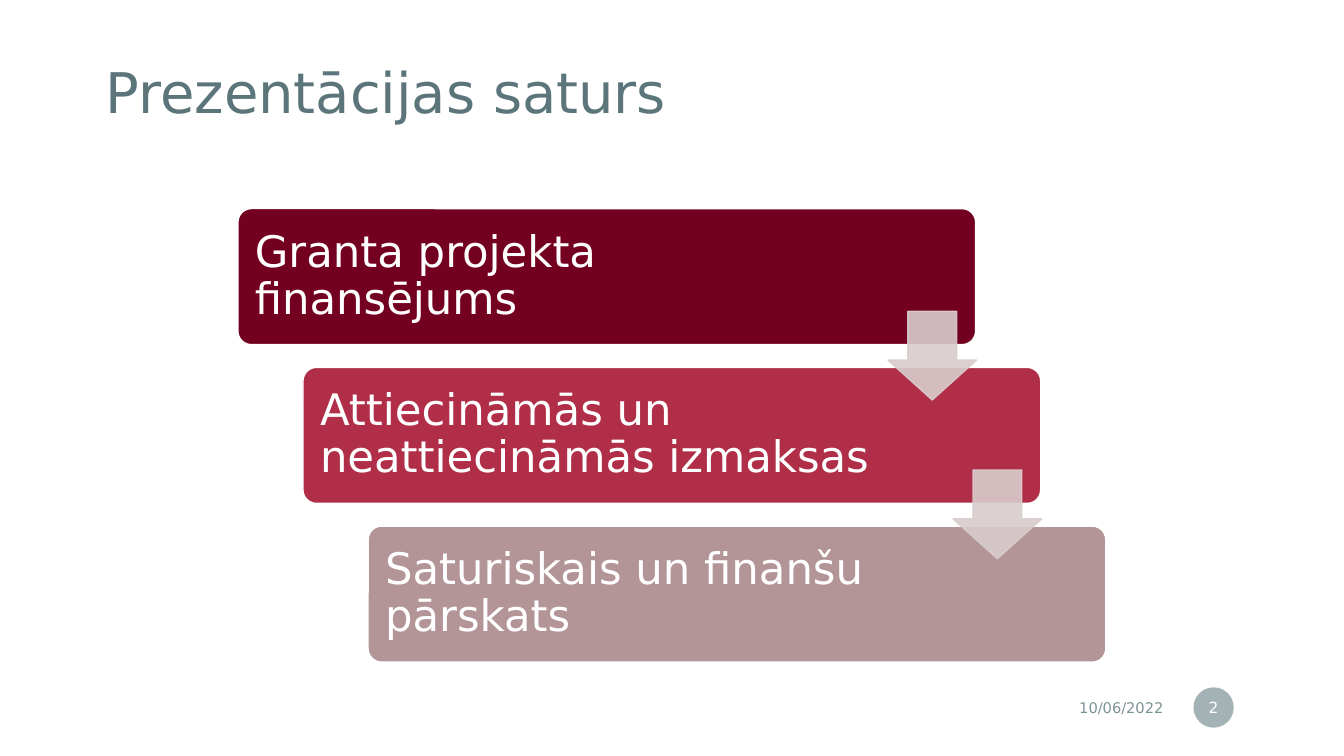
from dataclasses import dataclass

import pptx
import pptx.dml.color
import pptx.enum.shapes
import pptx.enum.text
import pptx.oxml
import pptx.oxml.ns
import pptx.shapes.autoshape
import pptx.slide
import pptx.util

Pt = pptx.util.Pt
RGBColor = pptx.dml.color.RGBColor
ShapeType = pptx.enum.shapes.MSO_SHAPE
Align = pptx.enum.text.PP_ALIGN

FONT = "DejaVu Sans"
WHITE = RGBColor(0xFF, 0xFF, 0xFF)
TITLE_COLOR = RGBColor(0x5B, 0x75, 0x7A)
FOOTER_COLOR = RGBColor(0x7C, 0x93, 0x96)
ARROW_COLOR = RGBColor(0xD8, 0xCC, 0xCD)

STEP_LEFT, STEP_TOP = 169.9, 149
STEP_WIDTH, STEP_HEIGHT = 527, 97.2
STEP_SHIFT, STEP_PITCH = 46.5, 113.4
STEP_INSET = 2.9
ARROW_LEFT, ARROW_TOP, ARROW_SIZE = 634.2, 222.3, 63.4


@dataclass(frozen=True)
class Box:
    left: float
    top: float
    width: float
    height: float

    def lengths(self) -> tuple[int, ...]:
        return tuple(Pt(v) for v in (self.left, self.top, self.width, self.height))


@dataclass(frozen=True)
class Step:
    text: str
    color: RGBColor
    text_width: float


STEPS = [
    Step("Granta projekta finansējums", RGBColor(0x74, 0x00, 0x21), 422.6),
    Step("Attiecināmās un neattiecināmās izmaksas", RGBColor(0xB0, 0x2E, 0x47), 411.8),
    Step("Saturiskais un finanšu pārskats", RGBColor(0xB3, 0x95, 0x98), 411.8),
]


def set_text(shape: pptx.shapes.autoshape.Shape, text: str, size: float, color: RGBColor,
             insets: tuple[float, float] = (7.2, 3.6), align: Align = Align.LEFT,
             line_spacing: float = 1.0) -> None:
    """Write one vertically centred paragraph; insets are (sides, top and bottom)."""
    frame = shape.text_frame
    frame.word_wrap = True
    frame.vertical_anchor = pptx.enum.text.MSO_ANCHOR.MIDDLE
    frame.margin_left = frame.margin_right = Pt(insets[0])
    frame.margin_top = frame.margin_bottom = Pt(insets[1])
    paragraph = frame.paragraphs[0]
    paragraph.text = text
    paragraph.alignment = align
    paragraph.line_spacing = line_spacing
    paragraph.font.name = FONT
    paragraph.font.size = Pt(size)
    paragraph.font.color.rgb = color


def add_filled_shape(slide: pptx.slide.Slide, kind: ShapeType, box: Box, fill: RGBColor,
                     line: RGBColor | None = None,
                     adjustments: tuple[float, ...] = ()) -> pptx.shapes.autoshape.Shape:
    shape = slide.shapes.add_shape(kind, *box.lengths())
    shape.shadow.inherit = False
    for index, value in enumerate(adjustments):
        shape.adjustments[index] = value
    shape.fill.solid()
    shape.fill.fore_color.rgb = fill
    if line is None:
        shape.line.fill.background()
    else:
        shape.line.color.rgb = line
        shape.line.width = Pt(1)
    return shape


def set_opacity(shape: pptx.shapes.autoshape.Shape, percent: int) -> None:
    """Apply the opacity to the fill and to the line, if it has a colour."""
    properties = shape.fill._xPr
    for color in properties.iter(pptx.oxml.ns.qn("a:srgbClr")):
        alpha = pptx.oxml.parse_xml(
            f'<a:alpha {pptx.oxml.ns.nsdecls("a")} val="{percent * 1000}"/>')
        color.append(alpha)


def add_step(slide: pptx.slide.Slide, index: int, step: Step) -> None:
    left = STEP_LEFT + index * STEP_SHIFT
    top = STEP_TOP + index * STEP_PITCH
    add_filled_shape(slide, ShapeType.ROUNDED_RECTANGLE,
                     Box(left, top, STEP_WIDTH, STEP_HEIGHT), step.color, WHITE, (0.1,))
    label_box = Box(left + STEP_INSET, top + STEP_INSET,
                    step.text_width, STEP_HEIGHT - 2 * STEP_INSET)
    label = slide.shapes.add_textbox(*label_box.lengths())
    set_text(label, step.text, 31, WHITE, (9.3, 9.3), line_spacing=0.9)


def add_step_arrow(slide: pptx.slide.Slide, index: int) -> None:
    box = Box(ARROW_LEFT + index * STEP_SHIFT, ARROW_TOP + index * STEP_PITCH,
              ARROW_SIZE, ARROW_SIZE)
    arrow = add_filled_shape(slide, ShapeType.DOWN_ARROW, box, ARROW_COLOR, ARROW_COLOR)
    arrow.adjustments[0] = 0.45
    arrow.adjustments[1] = 0.55
    arrow.adjustments[0], arrow.adjustments[1] = 0.55, 0.45
    set_opacity(arrow, 90)


def main() -> None:
    presentation = pptx.Presentation()
    presentation.slide_width = Pt(960)
    presentation.slide_height = Pt(540)
    slide = presentation.slides.add_slide(presentation.slide_layouts[6])

    title = slide.shapes.add_textbox(*Box(61.2, 25.2, 604, 85.7).lengths())
    set_text(title, "Prezentācijas saturs", 40, TITLE_COLOR, (14.4, 14.4), line_spacing=0.9)

    date = slide.shapes.add_textbox(*Box(621.4, 492.5, 216.7, 25.2).lengths())
    set_text(date, "10/06/2022", 10.5, FOOTER_COLOR, align=Align.RIGHT)

    page_number = add_filled_shape(slide, ShapeType.OVAL, Box(852.5, 491, 28.8, 28.8),
                                   FOOTER_COLOR)
    set_opacity(page_number, 70)
    set_text(page_number, "2", 11, WHITE, (1.4, 3.6), Align.CENTER)

    for index, step in enumerate(STEPS):
        add_step(slide, index, step)
    for index in range(len(STEPS) - 1):
        add_step_arrow(slide, index)

    presentation.save("out.pptx")


if __name__ == "__main__":
    main()
